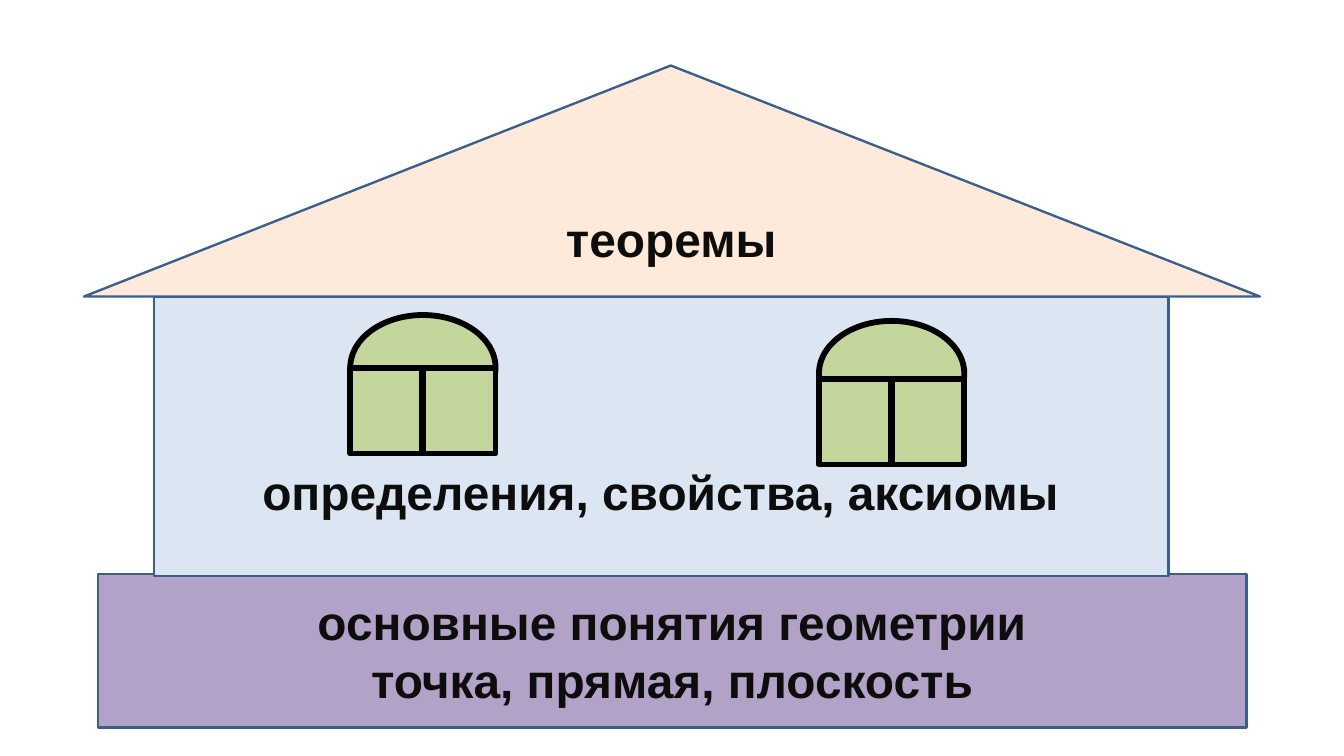
from lxml.etree import SubElement
from pptx import Presentation
from pptx.dml.color import RGBColor
from pptx.enum.shapes import MSO_CONNECTOR as Connector, MSO_SHAPE as Shape
from pptx.enum.text import MSO_ANCHOR as Anchor, PP_ALIGN as Align
from pptx.oxml.ns import qn
from pptx.util import Inches, Pt

OUTLINE, FRAME, INK = "3A5F8C", "000000", "0D0D0D"
GLASS = "C3D69B"
LABEL_FONT = {"name": "Arial", "size": Pt(41), "bold": True}


def color(value):
    return RGBColor.from_string(value)


def add_block(slide, kind, box, fill, line=OUTLINE, width=2):
    block = slide.shapes.add_shape(kind, *map(Inches, box))
    block.shadow.inherit = False
    block.fill.solid()
    block.fill.fore_color.rgb = color(fill)
    block.line.color.rgb = color(line)
    block.line.width = Pt(width)
    return block


def add_label(block, text, top_inset=0.05):
    frame = block.text_frame
    frame.word_wrap = True
    frame.vertical_anchor = Anchor.MIDDLE
    frame.margin_top = Inches(top_inset)
    frame.text = text
    for paragraph in frame.paragraphs:
        paragraph.alignment = Align.CENTER
        font = paragraph.runs[0].font
        for name, value in LABEL_FONT.items():
            setattr(font, name, value)
        font.color.rgb = color(INK)


def add_foundation(slide, box):
    foundation = add_block(slide, Shape.RECTANGLE, box, "B3A2C7")
    add_label(foundation, "основные понятия геометрии\nточка, прямая, плоскость")


def add_walls(slide, box):
    walls = add_block(slide, Shape.RECTANGLE, box, "DCE6F2")
    # The deep top inset keeps the label below the windows
    add_label(walls, "определения, свойства, аксиомы", top_inset=1.36)


def add_roof(slide, box):
    roof = add_block(slide, Shape.ISOSCELES_TRIANGLE, box, "FDEADA")
    roof.adjustments[0] = 0.499
    add_label(roof, "теоремы")


def add_window(slide, box, sash_offset):
    left, top, width, height = box
    sash_top = top + sash_offset
    sash_height = height - sash_offset
    # Arch, with the sash covering its lower half
    add_block(slide, Shape.OVAL, (left, top, width, 1.25), GLASS, FRAME, 5)
    add_block(slide, Shape.RECTANGLE, (left, sash_top, width, sash_height),
              GLASS, FRAME, 5)
    # Middle bar
    middle = Inches(left + width / 2)
    bar = slide.shapes.add_connector(
        Connector.STRAIGHT, middle, Inches(sash_top),
        middle, Inches(top + height))
    bar.line.color.rgb = color(FRAME)
    bar.line.width = Pt(6)
    SubElement(bar._element.spPr, qn("a:effectLst"))


def main():
    deck = Presentation()
    deck.slide_width, deck.slide_height = Inches(16), Inches(9)
    slide = deck.slides.add_slide(deck.slide_layouts[6])

    # House, from the ground up
    add_foundation(slide, (1.17, 6.83, 13.67, 1.83))
    add_walls(slide, (1.83, 3.53, 12.08, 3.33))
    add_roof(slide, (1, 0.78, 14, 2.75))

    # Windows
    add_window(slide, (4.17, 3.75, 1.73, 1.65), sash_offset=0.63)
    add_window(slide, (9.75, 3.82, 1.73, 1.71), sash_offset=0.69)

    deck.save("out.pptx")


if __name__ == "__main__":
    main()
